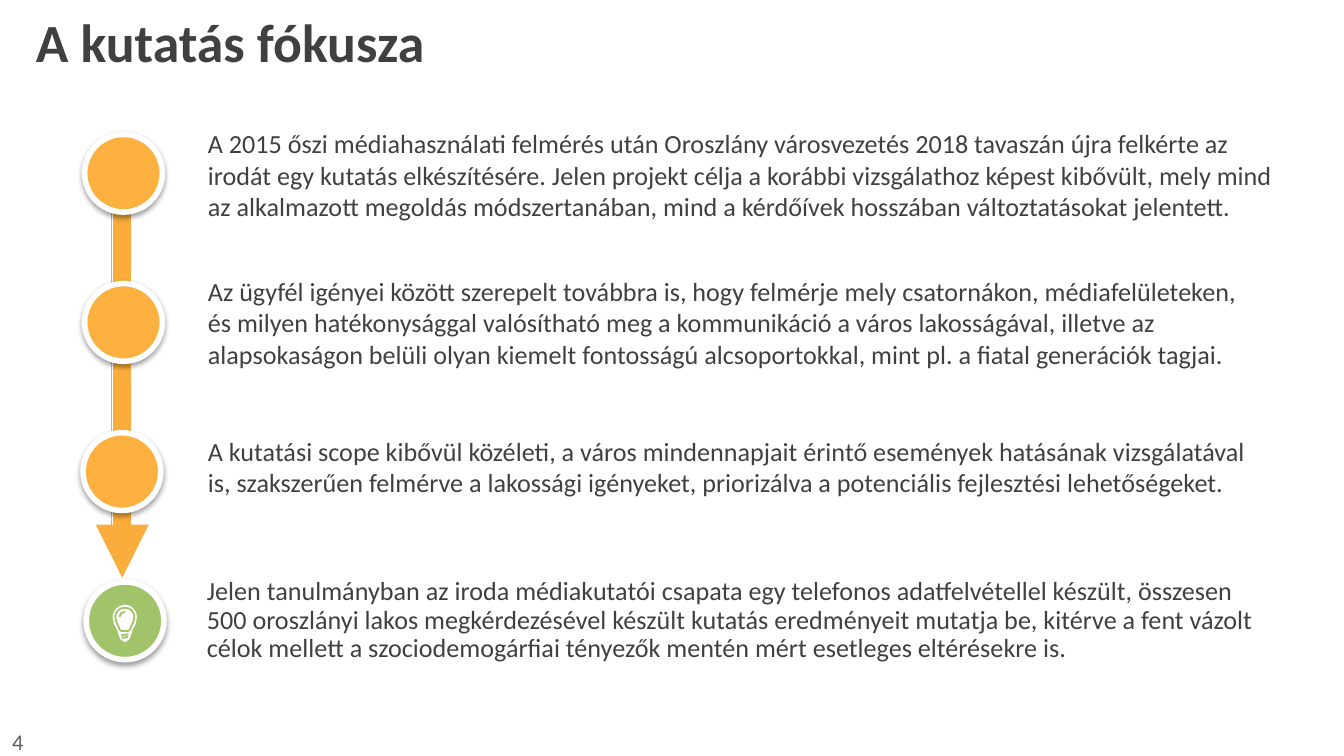
from lxml import etree
from pptx import Presentation
from pptx.dml.color import RGBColor
from pptx.enum.shapes import MSO_CONNECTOR, MSO_SHAPE
from pptx.enum.text import MSO_ANCHOR, MSO_AUTO_SIZE, PP_ALIGN
from pptx.oxml.ns import qn
from pptx.util import Cm, Pt

FONT = "Calibri"
COLORS = {
    "text": "404040", "number": "5F5F5F", "white": "FFFFFF",
    "arrow": "FAAD3A", "step": "FBB040", "result": "A1C46B",
}

TITLE = "A kutatás fókusza"
PAGE_NUMBER = "4"
STEPS = [
    {"text": "A 2015 őszi médiahasználati felmérés után Oroszlány városvezetés 2018 tavaszán "
             "újra felkérte az irodát egy kutatás elkészítésére. Jelen projekt célja a korábbi "
             "vizsgálathoz képest kibővült, mely mind az alkalmazott megoldás módszertanában, "
             "mind a kérdőívek hosszában változtatásokat jelentett.",
     "box": (3.68, 2.29, 20.83, 2.06), "circle_left": 1.6, "color": "step"},
    {"text": "Az ügyfél igényei között szerepelt továbbra is, hogy felmérje mely csatornákon, "
             "médiafelületeken, és milyen hatékonysággal valósítható meg a kommunikáció a város "
             "lakosságával, illetve az alapsokaságon belüli olyan kiemelt fontosságú "
             "alcsoportokkal, mint pl. a fiatal generációk tagjai.",
     "box": (3.68, 5.08, 20.42, 2.06), "circle_left": 1.6, "color": "step"},
    {"text": "A kutatási scope kibővül közéleti, a város mindennapjait érintő események "
             "hatásának vizsgálatával is, szakszerűen felmérve a lakossági igényeket, "
             "priorizálva a potenciális fejlesztési lehetőségeket.",
     "box": (3.68, 8.1, 20.22, 1.45), "circle_left": 1.57, "color": "step"},
    {"text": "Jelen tanulmányban az iroda médiakutatói csapata egy telefonos adatfelvétellel "
             "készült, összesen 500 oroszlányi lakos megkérdezésével készült kutatás "
             "eredményeit mutatja be, kitérve a fent vázolt célok mellett a szociodemogárfiai "
             "tényezők mentén mért esetleges eltérésekre is.",
     "box": (3.91, 10.92, 19.81, 1.63), "circle_left": 1.63, "color": "result",
     "tight": True},
]
CIRCLE_TOP, CIRCLE_STEP, CIRCLE_SIZE = 2.54, 2.82, 1.47

# Light bulb, in hundredths of a cm around the centre of its glass
BULB_CENTER = (236, 1166)
BULB_OUTLINE = [(0, -23), (9, -21), (16, -16), (21, -9), (23, 0), (20, 15), (15, 23),
                (13, 30), (11, 36), (8, 43), (0, 48)]
BULB_GLASS = [(0, -17), (7, -16), (13, -12), (17, -6), (18, 0), (16, 10), (12, 18),
              (10, 24), (6, 27)]
BULB_STROKES = [
    [(-10, 0), (-8, -5), (-5, -8), (0, -9)],
    [(-7, 35), (7, 33)],
    [(-6, 40), (6, 38)],
]


def rgb(name):
    return RGBColor.from_string(COLORS[name])


def write(shape, text, size, color, anchor=MSO_ANCHOR.TOP, bold=False, margins=None):
    frame = shape.text_frame
    frame.word_wrap = True
    frame.auto_size = MSO_AUTO_SIZE.NONE
    frame.vertical_anchor = anchor
    if margins:
        frame.margin_left = frame.margin_right = Cm(margins[0])
        frame.margin_top = frame.margin_bottom = Cm(margins[1])
    frame.text = text
    paragraph = frame.paragraphs[0]
    paragraph.alignment = PP_ALIGN.LEFT
    font = paragraph.runs[0].font
    font.name, font.size, font.bold = FONT, Pt(size), bold
    font.color.rgb = rgb(color)
    return paragraph


def add_text(page, place, *args, **options):
    box = page.shapes.add_textbox(*(Cm(length) for length in place))
    return write(box, *args, **options)


def add_vertical(page, x, top, bottom, width, arrow=False):
    line = page.shapes.add_connector(
        MSO_CONNECTOR.STRAIGHT, Cm(x), Cm(top), Cm(x), Cm(bottom))
    line.line.color.rgb = rgb("arrow")
    line.line.width = Pt(width)
    properties = line._element.spPr
    if arrow:
        etree.SubElement(properties.find(qn("a:ln")), qn("a:tailEnd"), type="triangle")
    etree.SubElement(properties, qn("a:effectLst"))


def add_circle(page, left, top, color):
    circle = page.shapes.add_shape(
        MSO_SHAPE.OVAL, Cm(left), Cm(top), Cm(CIRCLE_SIZE), Cm(CIRCLE_SIZE))
    circle.fill.solid()
    circle.fill.fore_color.rgb = rgb(color)
    circle.line.color.rgb = rgb("white")
    circle.line.width = Pt(3)
    circle.shadow.inherit = False
    effects = circle._element.spPr.find(qn("a:effectLst"))
    shadow = etree.SubElement(effects, qn("a:outerShdw"), blurRad=str(Pt(3.1)),
                              dist=str(Pt(1.6)), dir="5400000", rotWithShape="0")
    black = etree.SubElement(shadow, qn("a:srgbClr"), val="000000")
    etree.SubElement(black, qn("a:alpha"), val="38000")


def mirror(half):
    return half + [(-x, y) for x, y in reversed(half) if x]


def add_bulb_part(page, points, fill=None, stroke=None, closed=True):
    points = [(BULB_CENTER[0] + x, BULB_CENTER[1] + y) for x, y in points]
    builder = page.shapes.build_freeform(*points[0], scale=Cm(0.01))
    builder.add_line_segments(points[1:], close=closed)
    part = builder.convert_to_shape()
    part.shadow.inherit = False
    if fill:
        part.fill.solid()
        part.fill.fore_color.rgb = rgb(fill)
    else:
        part.fill.background()
    if stroke:
        part.line.color.rgb = rgb(stroke)
        part.line.width = Pt(1)
    else:
        part.line.fill.background()


deck = Presentation()
deck.slide_width, deck.slide_height = Cm(25.4), Cm(14.29)
page = deck.slides.add_slide(deck.slide_layouts[5])

# Title and page number
title = page.shapes.title
title.left, title.top, title.width, title.height = Cm(0.58), Cm(0.03), Cm(24.1), Cm(1.3)
write(title, TITLE, 28.8, "text", bold=True, margins=(0.1, 0.13))
add_text(page, (0, 13.64, 5.9, 0.76), PAGE_NUMBER, 12, "number", anchor=MSO_ANCHOR.MIDDLE,
         margins=(0.23, 0.13))

# Timeline arrow
add_vertical(page, 2.11, 2.95, 10.34, 0.75)
add_vertical(page, 2.31, 3, 10.92, 9.5, arrow=True)

# Steps
for index, step in enumerate(STEPS):
    add_circle(page, step["circle_left"], CIRCLE_TOP + index * CIRCLE_STEP, step["color"])
    if step.get("tight"):
        paragraph = add_text(page, step["box"], step["text"], 14, "text",
                             anchor=MSO_ANCHOR.MIDDLE, margins=(0, 0))
        paragraph.line_spacing = 0.9
    else:
        add_text(page, step["box"], step["text"], 14, "text")

# Light bulb in the last circle
add_bulb_part(page, mirror(BULB_OUTLINE), fill="white")
add_bulb_part(page, mirror(BULB_GLASS), stroke="result")
for points in BULB_STROKES:
    add_bulb_part(page, points, stroke="result", closed=False)

deck.save("out.pptx")
